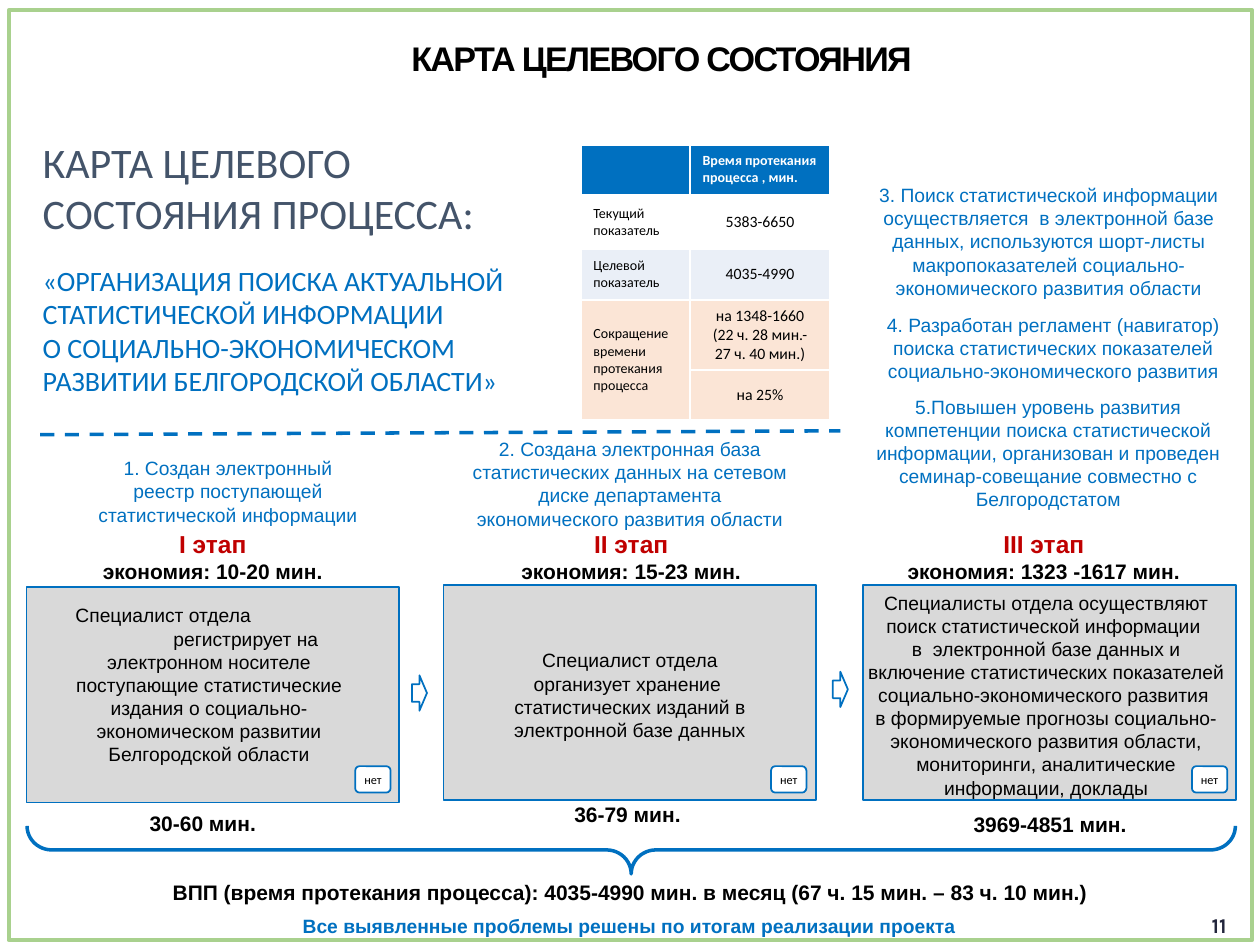
from lxml import etree
from pptx import Presentation
from pptx.dml.color import RGBColor
from pptx.enum.dml import MSO_LINE
from pptx.enum.shapes import MSO_CONNECTOR, MSO_SHAPE
from pptx.enum.text import MSO_ANCHOR, PP_ALIGN
from pptx.oxml.ns import qn
from pptx.util import Pt

LEFT, CENTER = PP_ALIGN.LEFT, PP_ALIGN.CENTER
TOP, MIDDLE = MSO_ANCHOR.TOP, MSO_ANCHOR.MIDDLE
RECTANGLE, ROUNDED = MSO_SHAPE.RECTANGLE, MSO_SHAPE.ROUNDED_RECTANGLE
ARROW, BRACE = MSO_SHAPE.RIGHT_ARROW, MSO_SHAPE.LEFT_BRACE
STRAIGHT, DASH = MSO_CONNECTOR.STRAIGHT, MSO_LINE.DASH

BLUE = RGBColor(0x00, 0x70, 0xC0)
RED = RGBColor(0xC0, 0x00, 0x00)
BLACK = RGBColor(0x00, 0x00, 0x00)
WHITE = RGBColor(0xFF, 0xFF, 0xFF)
GRAY = RGBColor(0xD9, 0xD9, 0xD9)
SLATE = RGBColor(0x44, 0x54, 0x6A)
INK = RGBColor(0x23, 0x26, 0x3C)
GREEN = RGBColor(0xA9, 0xD1, 0x8E)
PALE_BLUE = RGBColor(0xEA, 0xEF, 0xF7)
PEACH = RGBColor(0xFB, 0xE5, 0xD6)


def write(frame, lines, font="Arial", align=CENTER, anchor=MIDDLE):
    """Fill a text frame; each line is (text, size, colour, bold)."""
    frame.word_wrap = True
    frame.vertical_anchor = anchor
    for index, (text, size, color, bold) in enumerate(lines):
        para = frame.paragraphs[0] if index == 0 else frame.add_paragraph()
        para.alignment = align
        for part_index, part in enumerate(text.split("\n")):
            if part_index:
                para.add_line_break()
            span = para.add_run()
            span.text = part
            span.font.name = font
            span.font.size = Pt(size)
            span.font.bold = bold
            span.font.color.rgb = color


def add_shape(kind, left, top, width, height, line=BLUE, weight=1, fill=None):
    shape = slide.shapes.add_shape(kind, Pt(left), Pt(top), Pt(width), Pt(height))
    shape.shadow.inherit = False
    shape.line.color.rgb = line
    shape.line.width = Pt(weight)
    if fill is None:
        shape.fill.background()
    else:
        shape.fill.solid()
        shape.fill.fore_color.rgb = fill
    return shape


deck = Presentation()
deck.slide_width, deck.slide_height = Pt(720), Pt(540)
slide = deck.slides.add_slide(deck.slide_layouts[5])

# Title
title = slide.shapes.title
title.left, title.top, title.width, title.height = Pt(36), Pt(18), Pt(684), Pt(38)
write(title.text_frame, [("КАРТА ЦЕЛЕВОГО СОСТОЯНИЯ", 19.5, BLACK, True)], anchor=TOP)
title.text_frame.paragraphs[0].runs[0].font._element.set("spc", "-100")

# Page frame, stage boxes, arrows between them and the brace below
add_shape(RECTANGLE, 5, 5.8, 710.6, 531.4, line=GREEN, weight=2.25)
for left, top in ((15.1, 335.5), (253.4, 334.1), (493.2, 334.1)):
    add_shape(RECTANGLE, left, top, 213.1, 123.1, fill=GRAY)
for left, top in ((235.4, 385.9), (475.9, 383.8)):
    add_shape(ARROW, left, top, 8.6, 20.2)
brace = add_shape(BRACE, 347, 140.4, 27.4, 690.5, weight=2)
brace.rotation = 270
brace.adjustments[0] = 0.515

# Dashed divider
divider = slide.shapes.add_connector(STRAIGHT, Pt(23), Pt(248.4), Pt(480.2), Pt(246.2))
divider.line.color.rgb = BLUE
divider.line.width = Pt(2)
divider.line.dash_style = DASH
etree.SubElement(divider._element.spPr, qn("a:effectLst"))

# Text boxes: left, top, width, height, font, alignment, lines
texts = [
    (17.3, 87.1, 308.2, 39.6, "Calibri", LEFT,
     [("КАРТА ЦЕЛЕВОГО", 24, SLATE, False), ("СОСТОЯНИЯ ПРОЦЕССА:", 24, SLATE, False)]),
    (17.3, 146.2, 301.7, 85, "Calibri", LEFT,
     [("«ОРГАНИЗАЦИЯ ПОИСКА АКТУАЛЬНОЙ СТАТИСТИЧЕСКОЙ ИНФОРМАЦИИ \n"
       "О СОЦИАЛЬНО-ЭКОНОМИЧЕСКОМ РАЗВИТИИ БЕЛГОРОДСКОЙ ОБЛАСТИ»", 16, BLUE, False)]),
    (77, 499, 566.6, 21.6, "Arial", CENTER,
     [("ВПП (время протекания процесса): 4035-4990 мин. в месяц (67 ч. 15 мин. – 83 ч. 10 мин.)",
       12, BLACK, True)]),
    (149.8, 518.4, 419.8, 20.9, "Arial", CENTER,
     [("Все выявленные проблемы решены по итогам реализации проекта", 11, BLUE, True)]),
    (673.2, 517.7, 46.8, 22.3, "Karla", CENTER, [("11", 12, INK, True)]),
]

# Solutions
for left, top, width, height, text in (
    (44.6, 257, 171.4, 47.5, "1. Создан электронный реестр поступающей статистической информации"),
    (259.9, 246.2, 200.2, 60.5, "2. Создана электронная база статистических данных на сетевом диске "
     "департамента экономического развития области"),
    (481.7, 100.8, 235.4, 74.2, "3. Поиск статистической информации осуществляется  в электронной базе "
     "данных, используются шорт-листы макропоказателей социально-экономического развития области"),
    (487.4, 175, 229, 47.5, "4. Разработан регламент (навигатор) поиска статистических показателей "
     "социально-экономического развития"),
    (489.6, 221.8, 218.9, 74.2, "5.Повышен уровень развития компетенции поиска статистической информации, "
     "организован и проведен семинар-совещание совместно с Белгородстатом"),
):
    texts.append((left, top, width, height, "Arial", CENTER, [(text, 11, BLUE, False)]))

# Stage headings
for left, stage, saving in (
    (15.1, "I этап", "экономия: 10-20 мин."),
    (254.2, "II этап", "экономия: 15-23 мин."),
    (490, "III этап", "экономия: 1323 -1617 мин."),
):
    texts.append((left, 306.4, 213, 23, "Arial", CENTER,
                  [(stage, 14, RED, True), (saving, 12, BLACK, True)]))

# Stage descriptions
for left, top, width, height, lines in (
    (36, 337.7, 167, 107, (
        "Специалист отдела", "регистрирует на",
        "электронном носителе поступающие статистические издания о "
        "социально-экономическом развитии Белгородской области")),
    (276.5, 337, 167, 120.2, (
        "Специалист отдела организует хранение  статистических изданий в электронной базе данных",)),
    (487.4, 333.4, 221, 127.4, (
        "Специалисты отдела осуществляют поиск статистической информации ",
        "в  электронной базе данных и включение статистических показателей "
        "социально-экономического развития ",
        "в формируемые прогнозы социально-экономического развития области, "
        "мониторинги, аналитические информации, доклады")),
):
    texts.append((left, top, width, height, "Arial", CENTER,
                  [(line, 11, BLACK, False) for line in lines]))

# Stage durations
for left, top, width, duration in (
    (44.6, 458.6, 142.6, "30-60 мин."),
    (315.4, 453.6, 86.4, "36-79 мин."),
    (534.2, 459.4, 131.8, "3969-4851 мин."),
):
    texts.append((left, top, width, 23, "Arial", CENTER, [(duration, 12, BLACK, True)]))

for left, top, width, height, font, align, lines in texts:
    box = slide.shapes.add_textbox(Pt(left), Pt(top), Pt(width), Pt(height))
    write(box.text_frame, lines, font, align)
    if lines[0][0] == "Специалист отдела":
        # The first stage opens with a stepped pair of lines
        first, second = box.text_frame.paragraphs[:2]
        first.alignment = LEFT
        second._p.get_or_add_pPr().set("marL", str(Pt(42)))

# "No" badges
for left in (203, 440.6, 681.1):
    badge = add_shape(ROUNDED, left, 437.8, 20.2, 15.1, fill=WHITE)
    frame = badge.text_frame
    frame.margin_left = frame.margin_right = frame.margin_top = frame.margin_bottom = Pt(2.9)
    write(frame, [("нет", 7, BLACK, False)], "Calibri")

# Indicator table
rows = [
    (27.4, BLUE, "", ["Время протекания процесса , мин."]),
    (30.3, WHITE, "Текущий показатель", ["5383-6650"]),
    (29.1, PALE_BLUE, "Целевой показатель", ["4035-4990"]),
    (40, PEACH, "Сокращение времени протекания процесса",
     ["на 1348-1660", "(22 ч. 28 мин.-", "27 ч. 40 мин.)"]),
    (28.6, PEACH, "", ["на 25%"]),
]
table = slide.shapes.add_table(5, 2, Pt(331.9), Pt(83.2), Pt(142.4), Pt(155.4)).table
table.columns[0].width, table.columns[1].width = Pt(62.4), Pt(80)
for row, (height, fill, label, values) in enumerate(rows):
    table.rows[row].height = Pt(height)
    for column, lines in enumerate(([label], values)):
        cell = table.cell(row, column)
        for side in ("L", "R", "T", "B"):
            thick = (row, side) in ((0, "B"), (1, "T"))
            border = etree.SubElement(cell._tc.get_or_add_tcPr(), qn("a:ln" + side),
                                      w=str(Pt(3 if thick else 1)))
            border_fill = etree.SubElement(border, qn("a:solidFill"))
            etree.SubElement(border_fill, qn("a:srgbClr"), val=str(WHITE))
        cell.fill.solid()
        cell.fill.fore_color.rgb = fill
        header, value = row == 0, row > 0 and column == 1
        cell.vertical_anchor = TOP if header else MIDDLE
        if lines[0]:
            write(cell.text_frame, [(line, 9 if value else 8, WHITE if header else BLACK, header)
                                    for line in lines],
                  "Calibri", CENTER if value else LEFT, cell.vertical_anchor)
table.cell(3, 0).merge(table.cell(4, 0))

deck.save("out.pptx")
